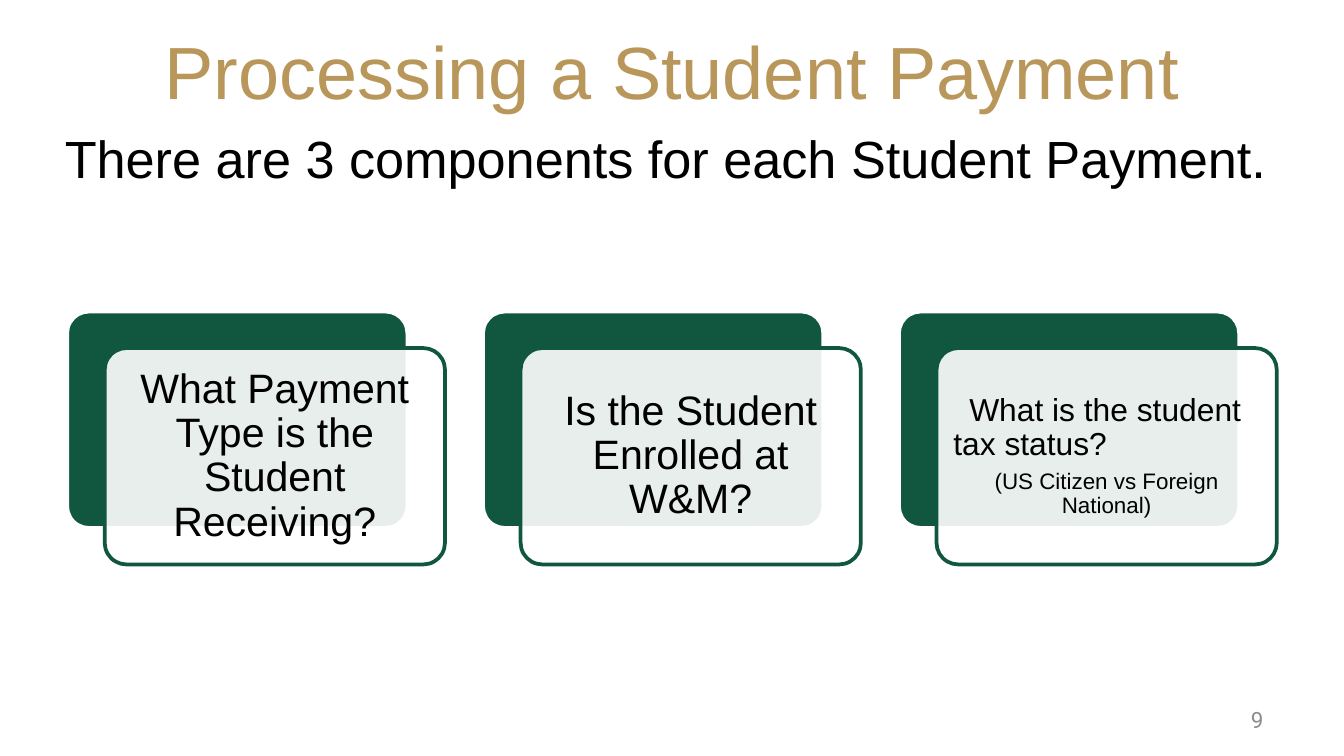
from dataclasses import dataclass

from lxml import etree
from pptx import Presentation
from pptx.dml.color import RGBColor
from pptx.enum.shapes import MSO_SHAPE
from pptx.enum.text import MSO_ANCHOR, MSO_AUTO_SIZE, PP_ALIGN
from pptx.oxml.ns import qn
from pptx.util import Cm, Pt

ROUND = MSO_SHAPE.ROUNDED_RECTANGLE
TOP, MIDDLE = MSO_ANCHOR.TOP, MSO_ANCHOR.MIDDLE
LEFT, CENTER, RIGHT = PP_ALIGN.LEFT, PP_ALIGN.CENTER, PP_ALIGN.RIGHT


@dataclass(frozen=True)
class Theme:
    gold: str = "B9975B"
    green: str = "115740"
    white: str = "FFFFFF"
    black: str = "000000"
    gray: str = "8C8C8C"
    font: str = "Arial"
    foot_font: str = "Roboto"
    title: float = 39.6
    body: float = 28
    card: float = 22
    ask: float = 17
    small: float = 12


@dataclass(frozen=True)
class Line:
    text: str
    size: float
    align: int = CENTER
    indent: float = 0
    before: float = 0


THEME = Theme()

# Card grid, in centimetres
CARD_W, CARD_H = 6.43, 4.09
CARD_X, CARD_Y, STEP = 1.27, 5.89, 7.86
SHIFT_X, SHIFT_Y = 0.71, 0.69

CARDS = [
    [Line("What Payment Type is the Student Receiving?", THEME.card)],
    [Line("Is the Student Enrolled at W&M?", THEME.card)],
    [
        Line("What is the student tax status?", THEME.ask, LEFT, indent=0.3),
        Line("(US Citizen vs Foreign National)", THEME.small, before=4),
    ],
]


def place(shape, x: float, y: float, w: float, h: float) -> None:
    shape.left, shape.top = Cm(x), Cm(y)
    shape.width, shape.height = Cm(w), Cm(h)


def write(shape, lines: list[Line], *, color: str = THEME.black,
          font: str = THEME.font, anchor=MIDDLE, space: float = 1.0,
          inset: float | None = None) -> None:
    """Fill a shape with formatted paragraphs."""
    frame = shape.text_frame
    frame.word_wrap = True
    frame.auto_size = MSO_AUTO_SIZE.NONE
    frame.vertical_anchor = anchor
    if inset is not None:
        frame.margin_left = frame.margin_right = Cm(inset)
        frame.margin_top = frame.margin_bottom = Cm(inset)
    for i, line in enumerate(lines):
        para = frame.add_paragraph() if i else frame.paragraphs[0]
        para.text = line.text
        para.alignment = line.align
        para.line_spacing = space
        para.space_before = Pt(line.before)
        props = para._p.get_or_add_pPr()
        props.set("marL", "0")
        props.set("indent", str(Cm(line.indent)))
        etree.SubElement(props, qn("a:buNone"))
        para.font.name = font
        para.font.size = Pt(line.size)
        para.font.color.rgb = RGBColor.from_string(color)


def panel(slide, x: float, y: float, fill: str, edge: str):
    """Draw one rounded panel of a card."""
    shape = slide.shapes.add_shape(
        ROUND, Cm(x), Cm(y), Cm(CARD_W), Cm(CARD_H))
    shape.adjustments[0] = 0.1
    shape.shadow.inherit = False
    shape.fill.solid()
    shape.fill.fore_color.rgb = RGBColor.from_string(fill)
    shape.line.color.rgb = RGBColor.from_string(edge)
    shape.line.width = Pt(2)
    return shape


def fade(shape, percent: int) -> None:
    """Set the opacity of a solid fill."""
    tint = shape._element.spPr.find(qn("a:solidFill"))[0]
    etree.SubElement(tint, qn("a:alpha"), val=str(percent * 1000))


def card(slide, x: float, lines: list[Line]) -> None:
    panel(slide, x, CARD_Y, THEME.green, THEME.white)
    front = panel(slide, x + SHIFT_X, CARD_Y + SHIFT_Y,
                  THEME.white, THEME.green)
    fade(front, 90)
    write(front, lines, space=0.9, inset=0.2)


def main() -> None:
    deck = Presentation()
    deck.slide_width, deck.slide_height = Cm(25.4), Cm(14.29)
    slide = deck.slides.add_slide(deck.slide_layouts[1])

    # Title and lead sentence
    title, body = slide.placeholders
    place(title, 1.27, 0.58, 22.86, 1.5)
    write(title, [Line("Processing a Student Payment", THEME.title)],
          color=THEME.gold)
    place(body, 0.97, 2.26, 23.85, 1.5)
    write(body, [Line("There are 3 components for each Student Payment.",
                      THEME.body, LEFT)], anchor=TOP)

    # Three cards
    for i, lines in enumerate(CARDS):
        card(slide, CARD_X + i * STEP, lines)

    # Page number
    page = slide.shapes.add_textbox(Cm(18.21), Cm(13.23), Cm(5.92), Cm(0.76))
    write(page, [Line("9", THEME.small, RIGHT)],
          color=THEME.gray, font=THEME.foot_font)

    deck.save("out.pptx")


if __name__ == "__main__":
    main()
